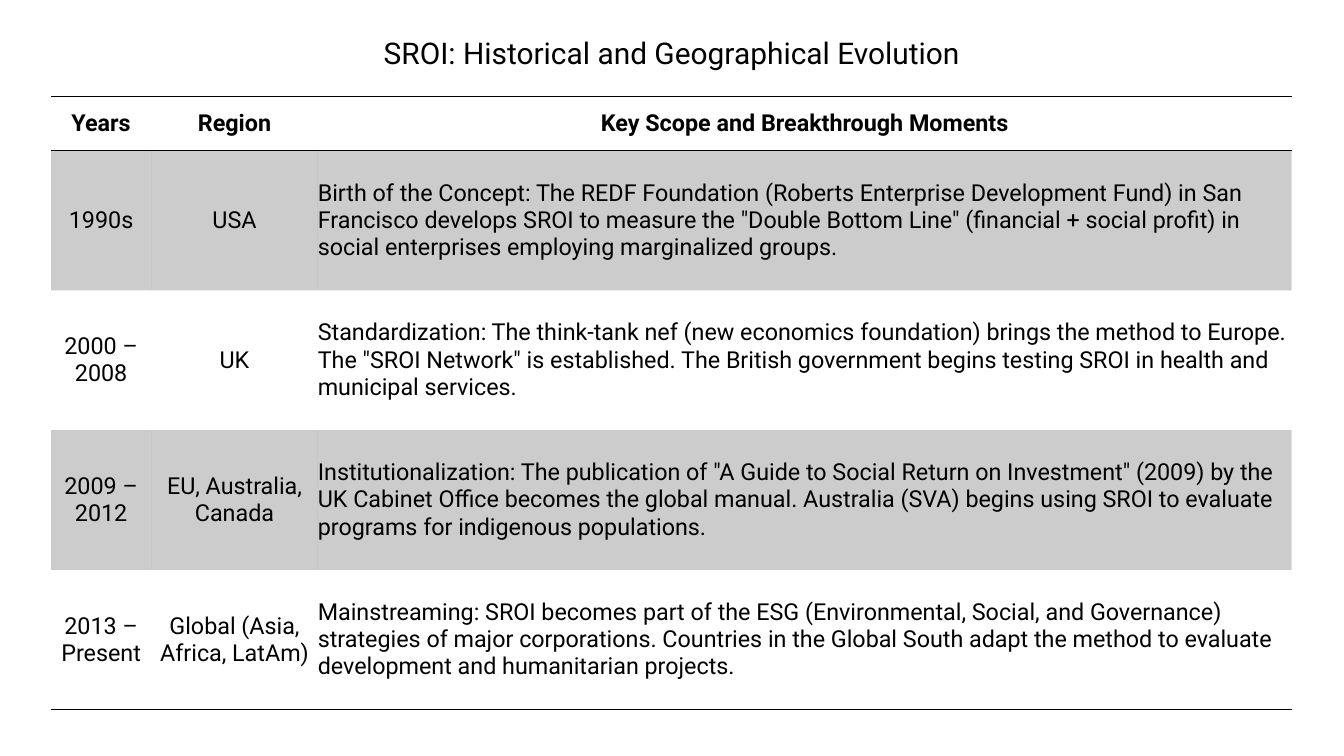
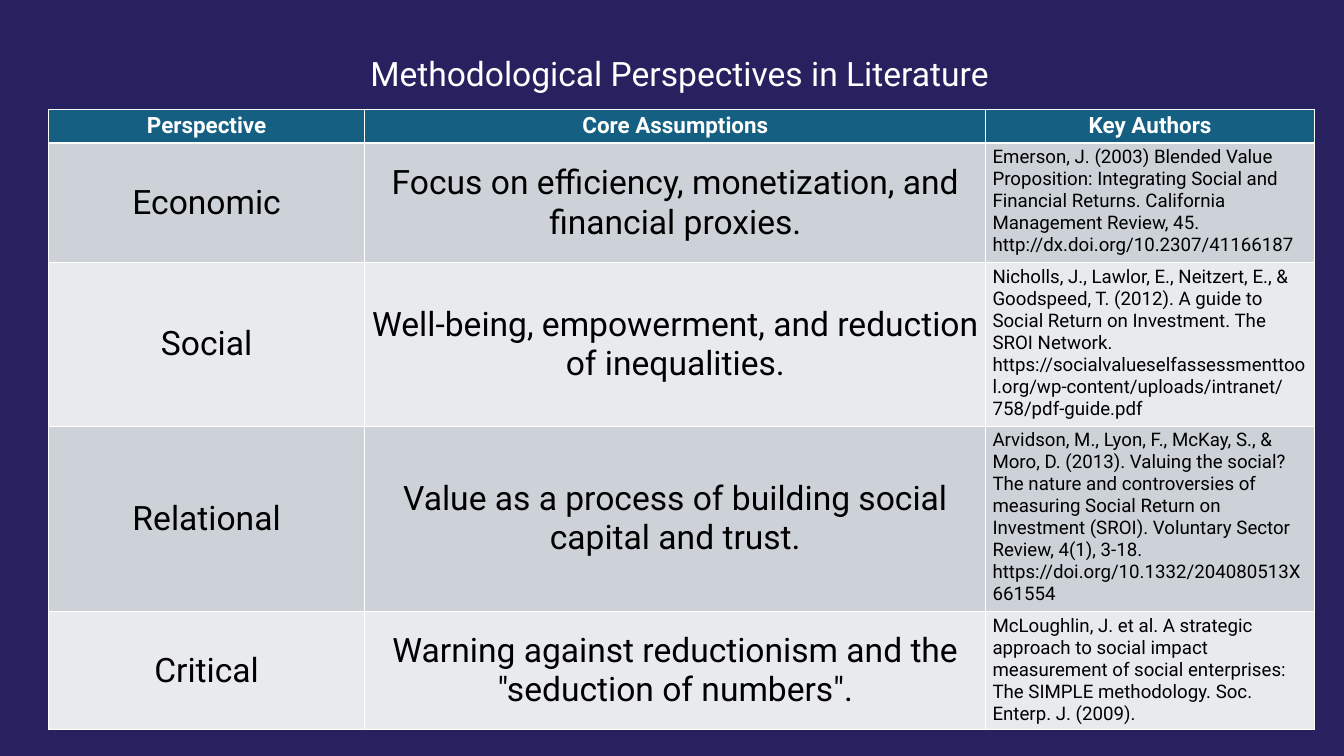
from dataclasses import dataclass

from lxml import etree
from pptx import Presentation
from pptx import util as u
from pptx.dml import color
from pptx.enum import text
from pptx.oxml import ns

MID, TOP = text.MSO_ANCHOR.MIDDLE, text.MSO_ANCHOR.TOP
LEFT, CENTER = text.PP_ALIGN.LEFT, text.PP_ALIGN.CENTER
PLAIN = "{2D5ABB26-0587-4C30-8999-92F81FD0307C}"


# Shared colours and type sizes
@dataclass(frozen=True)
class Theme:
    font: str = "Roboto"
    black: str = "000000"
    white: str = "FFFFFF"
    navy: str = "272160"
    teal: str = "156082"
    bands: tuple = ("CCD2D8", "E8EAED")
    shade: int = 20
    past_title: int = 32
    past_body: int = 25
    view_title: int = 36
    view_head: int = 24
    view_body: int = 36
    cite: int = 20


class Deck:
    def __init__(self, theme):
        self.theme = theme
        self.prs = Presentation()
        self.prs.slide_width = u.Inches(20)
        self.prs.slide_height = u.Inches(11.25)
        self.slide = None

    def page(self, back):
        self.slide = self.prs.slides.add_slide(self.prs.slide_layouts[5])
        fill = self.slide.background.fill
        fill.solid()
        fill.fore_color.rgb = color.RGBColor.from_string(back)

    def style(self, para, size, ink, align, bold=False):
        para.alignment = align
        for run in para.runs:
            font = run.font
            font.name, font.size, font.bold = self.theme.font, u.Pt(size), bold
            font.color.rgb = color.RGBColor.from_string(ink)

    def title(self, words, box, size, ink, align=CENTER, anchor=MID):
        shape = self.slide.shapes.title
        shape.left, shape.top, shape.width, shape.height = map(u.Inches, box)
        frame = shape.text_frame
        frame.text = words
        frame.word_wrap = True
        frame.auto_size = text.MSO_AUTO_SIZE.NONE
        frame.vertical_anchor = anchor
        self.style(frame.paragraphs[0], size, ink, align)
        return frame.paragraphs[0]

    def table(self, rows, at, cols, heights):
        frame = self.slide.shapes.add_table(
            len(rows), len(cols), *map(u.Inches, (*at, sum(cols), sum(heights))))
        grid = frame.table
        grid.horz_banding = False
        grid._tbl.tblPr.find(ns.qn("a:tableStyleId")).text = PLAIN
        for col, width in zip(grid.columns, cols):
            col.width = u.Inches(width)
        for row, height in zip(grid.rows, heights):
            row.height = u.Inches(height)
        return grid

    def cell(self, cell, words, size, ink, align=CENTER, anchor=MID,
             bold=False, pads=(0.1, 0.05)):
        cell.text_frame.text = words
        cell.vertical_anchor = anchor
        cell.margin_left = cell.margin_right = u.Inches(pads[0])
        cell.margin_top = cell.margin_bottom = u.Inches(pads[1])
        for para in cell.text_frame.paragraphs:
            self.style(para, size, ink, align, bold)

    def paint(self, cell, tone, alpha=None):
        cell.fill.solid()
        cell.fill.fore_color.rgb = color.RGBColor.from_string(tone)
        if alpha:
            tint = cell._tc.tcPr.find(".//" + ns.qn("a:srgbClr"))
            etree.SubElement(tint, ns.qn("a:alpha"), val=str(alpha * 1000))

    def edges(self, cell, tone, **widths):
        # Borders come before the fill, in the order L, R, T, B
        props = cell._tc.get_or_add_tcPr()
        sides = [side for side in "LRTB" if side in widths]
        for spot, side in enumerate(sides):
            line = etree.Element(ns.qn("a:ln" + side), w=str(u.Pt(widths[side])))
            fill = etree.SubElement(line, ns.qn("a:solidFill"))
            etree.SubElement(fill, ns.qn("a:srgbClr"), val=tone)
            props.insert(spot, line)


PAST = [
    ("Years", "Region", "Key Scope and Breakthrough Moments"),
    ("1990s", "USA",
     "Birth of the Concept: The REDF Foundation (Roberts Enterprise Development Fund) "
     "in San Francisco develops SROI to measure the \"Double Bottom Line\" (financial + "
     "social profit) in social enterprises employing marginalized groups."),
    ("2000 – 2008", "UK",
     "Standardization: The think-tank nef (new economics foundation) brings the method "
     "to Europe. The \"SROI Network\" is established. The British government begins "
     "testing SROI in health and municipal services."),
    ("2009 – 2012", "EU, Australia, Canada",
     "Institutionalization: The publication of \"A Guide to Social Return on "
     "Investment\" (2009) by the UK Cabinet Office becomes the global manual. Australia "
     "(SVA) begins using SROI to evaluate programs for indigenous populations."),
    ("2013 – Present", "Global (Asia, Africa, LatAm)",
     "Mainstreaming: SROI becomes part of the ESG (Environmental, Social, and "
     "Governance) strategies of major corporations. Countries in the Global South adapt "
     "the method to evaluate development and humanitarian projects."),
]

VIEWS = [
    ("Perspective", "Core Assumptions", "Key Authors"),
    ("Economic", "Focus on efficiency, monetization, and financial proxies.",
     "Emerson, J. (2003) Blended Value Proposition: Integrating Social and Financial "
     "Returns. California Management Review, 45.\n"
     "http://dx.doi.org/10.2307/41166187"),
    ("Social", "Well-being, empowerment, and reduction of inequalities.",
     "Nicholls, J., Lawlor, E., Neitzert, E., & Goodspeed, T. (2012). A guide to Social "
     "Return on Investment. The SROI Network. "
     "https://socialvalueselfassessmenttool.org/wp-content/uploads/intranet/758/pdf-guide.pdf"),
    ("Relational", "Value as a process of building social capital and trust.",
     "Arvidson, M., Lyon, F., McKay, S., & Moro, D. (2013). Valuing the social? The "
     "nature and controversies of measuring Social Return on Investment (SROI). "
     "Voluntary Sector Review, 4(1), 3-18. https://doi.org/10.1332/204080513X661554"),
    ("Critical", "Warning against reductionism and the \"seduction of numbers\".",
     "McLoughlin, J. et al. A strategic approach to social impact measurement of social "
     "enterprises: The SIMPLE methodology. Soc. Enterp. J. (2009)."),
]


# Slide 1: history table with ruled head and shaded odd rows
def history(deck):
    theme = deck.theme
    deck.page(theme.white)
    head = deck.title("SROI: Historical and Geographical Evolution",
                      (1.05, 0.41, 17.9, 0.81), theme.past_title, theme.black)
    head.line_spacing = 0.9
    head.space_after = u.Pt(6)
    grid = deck.table(PAST, (0.76, 1.43), (1.49, 2.48, 14.49), [0.81] + [2.08] * 4)
    for r, row in enumerate(PAST):
        for c, words in enumerate(row):
            cell = grid.cell(r, c)
            prose = r > 0 and c == 2
            deck.cell(cell, words, theme.past_body, theme.black,
                      LEFT if prose else CENTER, bold=r == 0,
                      pads=(0 if prose else 0.01, 0.01))
            if r % 2:
                deck.paint(cell, theme.black, theme.shade)
            if r == 0:
                deck.edges(cell, theme.black, T=1, B=1)
            elif r == len(PAST) - 1:
                deck.edges(cell, theme.black, B=1)


# Slide 2: perspectives table with banded rows
def outlook(deck):
    theme = deck.theme
    deck.page(theme.navy)
    deck.title("Methodological Perspectives in Literature", (5.41, 0.74, 10, 0.71),
               theme.view_title, theme.white, LEFT, TOP)
    grid = deck.table(VIEWS, (0.72, 1.63), (4.71, 9.24, 4.89),
                      (0.5, 1.78, 2.43, 2.76, 1.76))
    for r, row in enumerate(VIEWS):
        for c, words in enumerate(row):
            cell = grid.cell(r, c)
            if r == 0:
                deck.cell(cell, words, theme.view_head, theme.white,
                          anchor=TOP, bold=True)
            elif c == 2:
                deck.cell(cell, words, theme.cite, theme.black, LEFT, TOP)
            else:
                deck.cell(cell, words, theme.view_body, theme.black)
            deck.paint(cell, theme.bands[(r - 1) % 2] if r else theme.teal)
            deck.edges(cell, theme.white, L=1, R=1,
                       T=3 if r == 1 else 1, B=1 if r else 3)


def main():
    deck = Deck(Theme())
    history(deck)
    outlook(deck)
    deck.prs.save("out.pptx")


if __name__ == "__main__":
    main()
